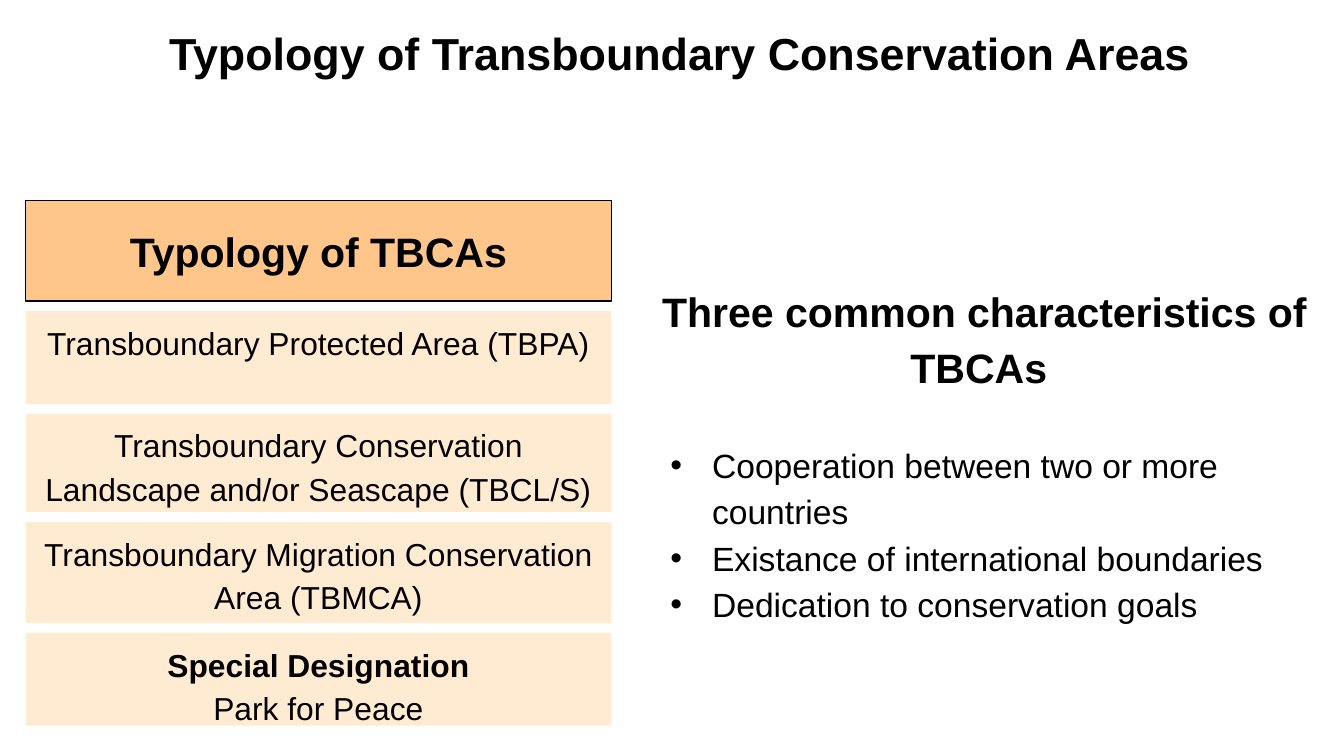
"""Build a slide on the typology of transboundary conservation areas."""
from lxml import etree
from pptx import Presentation
from pptx.dml.color import RGBColor
from pptx.enum.shapes import MSO_SHAPE
from pptx.enum.text import MSO_ANCHOR, PP_ALIGN
from pptx.oxml.ns import qn
from pptx.util import Inches, Pt

RECT = MSO_SHAPE.RECTANGLE
TOP, MIDDLE = MSO_ANCHOR.TOP, MSO_ANCHOR.MIDDLE
LEFT, CENTER = PP_ALIGN.LEFT, PP_ALIGN.CENTER

WIDTH = 10
HEIGHT = WIDTH * 9 / 16
FONT = "Arial"
COLORS = {"text": "000000", "panel": "FFFFFF", "header": "FFC386", "type": "FFE9CC"}

TITLE = "Typology of Transboundary Conservation Areas"
HEADER = "Typology of TBCAs"
TYPES = [
    (0.69, ["Transboundary Protected Area (TBPA)"]),
    (0.73, ["Transboundary Conservation Landscape and/or Seascape (TBCL/S)"]),
    (0.75, ["Transboundary Migration Conservation Area (TBMCA)"]),
    (0.69, ["Special Designation", "Park for Peace"]),
]
TRAITS_HEADING = "Three common characteristics of TBCAs "
TRAITS = [
    "Cooperation between two or more countries",
    "Existance of international boundaries",
    "Dedication to conservation goals",
]

COLUMN_LEFT, COLUMN_WIDTH = 0.19, 4.36
COLUMN_TOP, COLUMN_BOTTOM = 1.49, 5.40
HEADER_HEIGHT = 0.75
TITLE_BOX = (1.16, 0.14, 8.84, 0.5)
TRAITS_BOX = (4.8, 1.86, 5.05, 3)
LINE_SPACING = 1.15


def add_box(s, box, color, opacity, anchor, inset=0.05):
    sp = s.shapes.add_shape(RECT, *map(Inches, box))
    sp.shadow.inherit = False
    sp.line.fill.background()
    sp.fill.solid()
    sp.fill.fore_color.rgb = RGBColor.from_string(COLORS[color])
    rgb = sp._element.spPr.find(qn("a:solidFill"))[0]
    etree.SubElement(rgb, qn("a:alpha"), val=str(opacity * 1000))
    tf = sp.text_frame
    tf.word_wrap = True
    tf.vertical_anchor = anchor
    tf.margin_left = tf.margin_right = Inches(0.1)
    tf.margin_top = tf.margin_bottom = Inches(inset)
    return sp


def style(p, size, bold=False, align=CENTER, spacing=LINE_SPACING):
    p.alignment = align
    p.line_spacing = spacing
    for r in p.runs:
        r.font.name = FONT
        r.font.size = Pt(size)
        r.font.bold = bold
        r.font.color.rgb = RGBColor.from_string(COLORS["text"])


def add_bullet(p):
    pPr = p._p.get_or_add_pPr()
    pPr.set("marL", str(Inches(0.4)))
    pPr.set("indent", str(Inches(-0.31)))
    etree.SubElement(pPr, qn("a:buFont"), typeface=FONT)
    etree.SubElement(pPr, qn("a:buChar"), char="•")


def main():
    prs = Presentation()
    prs.slide_width, prs.slide_height = Inches(WIDTH), Inches(HEIGHT)
    s = prs.slides.add_slide(prs.slide_layouts[6])

    title = add_box(s, TITLE_BOX, "panel", 55, MIDDLE)
    title.text_frame.text = TITLE
    style(title.text_frame.paragraphs[0], 24, True, LEFT, 1.0)

    header = add_box(s, (COLUMN_LEFT, COLUMN_TOP, COLUMN_WIDTH, HEADER_HEIGHT),
                     "header", 95, MIDDLE)
    header.line.color.rgb = RGBColor.from_string(COLORS["text"])
    header.line.width = Pt(0.75)
    header.text_frame.text = HEADER
    style(header.text_frame.paragraphs[0], 22, True, spacing=1.0)

    filled = HEADER_HEIGHT + sum(height for height, _ in TYPES)
    gap = (COLUMN_BOTTOM - COLUMN_TOP - filled) / len(TYPES)
    top = COLUMN_TOP + HEADER_HEIGHT + gap
    for height, lines in TYPES:
        sp = add_box(s, (COLUMN_LEFT, top, COLUMN_WIDTH, height), "type", 90, TOP)
        sp.text_frame.text = "\n".join(lines)
        for i, p in enumerate(sp.text_frame.paragraphs):
            style(p, 17, bold=i < len(lines) - 1)
        top += height + gap

    tf = add_box(s, TRAITS_BOX, "panel", 79, MIDDLE, 0.1).text_frame
    tf.text = "\n".join([TRAITS_HEADING, *TRAITS])
    heading, *traits = tf.paragraphs
    style(heading, 22, True)
    for p in traits:
        add_bullet(p)
        style(p, 18, align=LEFT)
    traits[0].space_before = Pt(25)

    prs.save("out.pptx")


if __name__ == "__main__":
    main()
